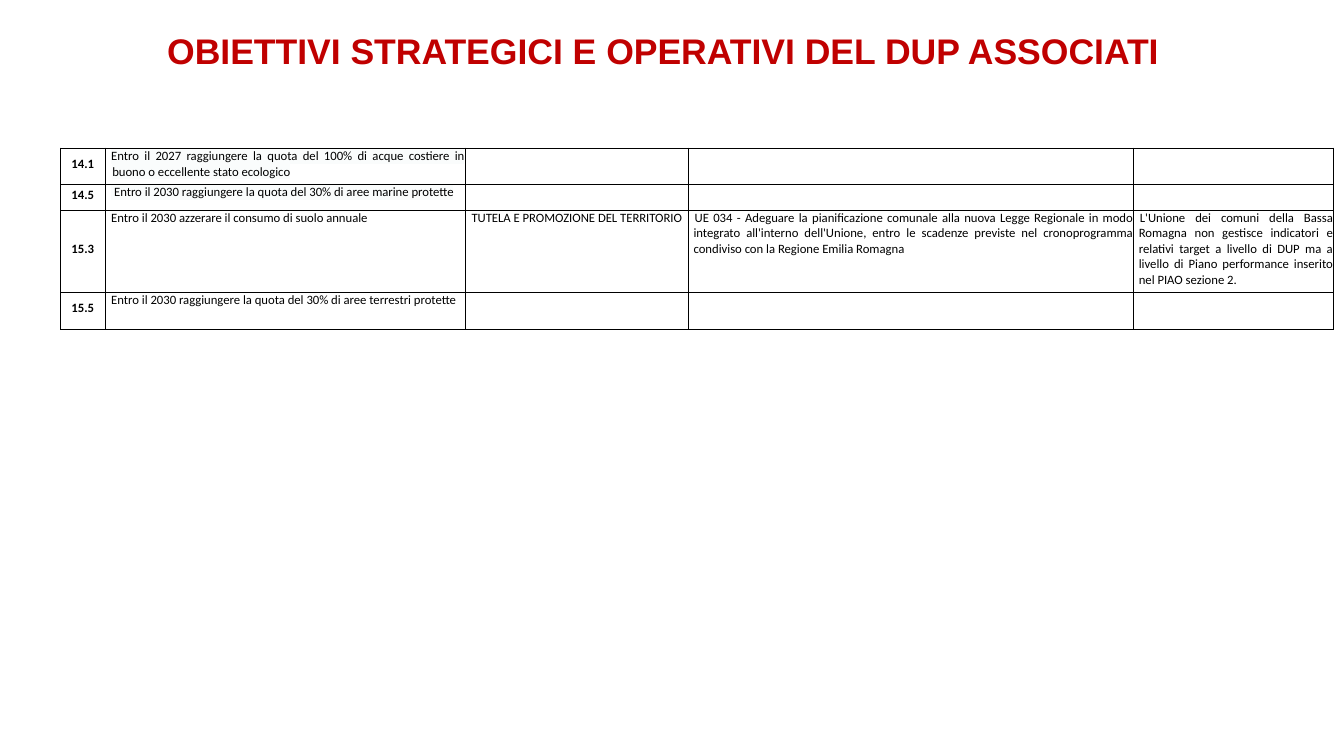
"""Builds the slide on the strategic and operational goals of the associated DUP."""
from dataclasses import dataclass

from lxml.etree import SubElement
from pptx import Presentation
from pptx.dml.color import RGBColor
from pptx.enum.text import MSO_ANCHOR, MSO_AUTO_SIZE, PP_ALIGN
from pptx.oxml.ns import qn
from pptx.slide import Slide
from pptx.table import _Cell
from pptx.text.text import _Paragraph
from pptx.util import Cm, Pt

BLACK, RED, PALE = "000000", "C00000", "FAFCFC"
COLUMN_WIDTHS = (1.24, 10.0, 6.2, 12.37, 5.56)
CODE_COLUMN, TARGET_COLUMN = 0, 1


@dataclass(frozen=True)
class Goal:
    code: str
    height: float
    target: str
    highlight: str = ""
    strategy: str = ""
    operation: str = ""
    indicator: str = ""

    def texts(self) -> tuple[str, ...]:
        return self.code, self.target, self.strategy, self.operation, self.indicator


GOALS = (
    Goal("14.1", 1.0, "Entro il 2027 raggiungere la quota del 100% di acque costiere in "
         "buono o eccellente stato ecologico", PALE),
    Goal("14.5", 0.72, " Entro il 2030 raggiungere la quota del 30% di aree marine protette", PALE),
    Goal("15.3", 2.28, "Entro il 2030 azzerare il consumo di suolo annuale",
         strategy="TUTELA E PROMOZIONE DEL TERRITORIO",
         operation="UE 034 - Adeguare la pianificazione comunale alla nuova Legge Regionale "
         "in modo integrato all'interno dell'Unione, entro le scadenze previste nel "
         "cronoprogramma condiviso con la Regione Emilia Romagna",
         indicator="L'Unione dei comuni della Bassa Romagna non gestisce indicatori e relativi "
         "target a livello di DUP ma a livello di Piano performance inserito nel PIAO sezione 2."),
    Goal("15.5", 1.03, "Entro il 2030 raggiungere la quota del 30% di aree terrestri protette"),
)


def rgb(value: str) -> RGBColor:
    return RGBColor.from_string(value)


def add_text(paragraph: _Paragraph, text: str, font_name: str, size: float, color: str,
             bold: bool, highlight: str = "") -> None:
    run = paragraph.add_run()
    run.text = text
    run.font.size = Pt(size)
    run.font.bold = bold
    run.font.color.rgb = rgb(color)
    if highlight:
        marker = SubElement(run.font._element, qn("a:highlight"))
        SubElement(marker, qn("a:srgbClr"), val=highlight)
    run.font.name = font_name


def set_borders(cell: _Cell) -> None:
    properties = cell._tc.get_or_add_tcPr()
    for position, side in enumerate(("lnL", "lnR", "lnT", "lnB")):
        border = SubElement(properties, qn(f"a:{side}"), w=str(Pt(0.25)))
        fill = SubElement(border, qn("a:solidFill"))
        SubElement(fill, qn("a:srgbClr"), val=BLACK)
        properties.insert(position, border)


def set_indent(paragraph: _Paragraph, left: float, first_line: float) -> None:
    properties = paragraph._p.get_or_add_pPr()
    properties.set("marL", str(Cm(left)))
    properties.set("indent", str(Cm(first_line)))


def fill_cell(cell: _Cell, text: str, column: int, highlight: str) -> None:
    cell.fill.background()
    set_borders(cell)
    cell.margin_left = cell.margin_right = cell.margin_top = Cm(0.02)
    cell.margin_bottom = Cm(0.12)
    paragraph = cell.text_frame.paragraphs[0]
    if not text:
        SubElement(paragraph._p, qn("a:endParaRPr"), sz="1000")
        return
    is_code = column == CODE_COLUMN
    if is_code:
        cell.vertical_anchor = MSO_ANCHOR.MIDDLE
        paragraph.alignment = PP_ALIGN.CENTER
    else:
        paragraph.alignment = PP_ALIGN.JUSTIFY
        set_indent(paragraph, *((0.18, -0.03) if column == TARGET_COLUMN else (0.13, 0.03)))
    add_text(paragraph, text, "Calibri", 10, BLACK, is_code,
             highlight if column == TARGET_COLUMN else "")


def add_title(slide: Slide) -> None:
    title = slide.shapes.add_textbox(Cm(0.03), Cm(0.08), Cm(37.29), Cm(1.83)).text_frame
    title.word_wrap = True
    title.auto_size = MSO_AUTO_SIZE.SHAPE_TO_FIT_TEXT
    title.margin_right = Cm(0.76)
    heading = title.paragraphs[0]
    heading.alignment = PP_ALIGN.CENTER
    heading.line_spacing = 1.5
    heading.space_after = Pt(6)
    add_text(heading, "OBIETTIVI STRATEGICI E OPERATIVI DEL DUP ASSOCIATI", "Arial", 28, RED, True)


def add_goals(slide: Slide) -> None:
    total_height = sum(goal.height for goal in GOALS)
    goals_table = slide.shapes.add_table(
        len(GOALS), len(COLUMN_WIDTHS), Cm(1.68), Cm(4.11),
        Cm(sum(COLUMN_WIDTHS)), Cm(total_height)).table
    goals_table.first_row = goals_table.horz_banding = False
    for column, width in zip(goals_table.columns, COLUMN_WIDTHS):
        column.width = Cm(width)
    for row, goal in zip(goals_table.rows, GOALS):
        row.height = Cm(goal.height)
        for column, (cell, text) in enumerate(zip(row.cells, goal.texts())):
            fill_cell(cell, text, column, goal.highlight)


def main() -> None:
    presentation = Presentation()
    presentation.slide_width, presentation.slide_height = Cm(37.34), Cm(21.01)
    slide = presentation.slides.add_slide(presentation.slide_layouts[6])
    add_title(slide)
    add_goals(slide)
    presentation.save("out.pptx")


if __name__ == "__main__":
    main()
